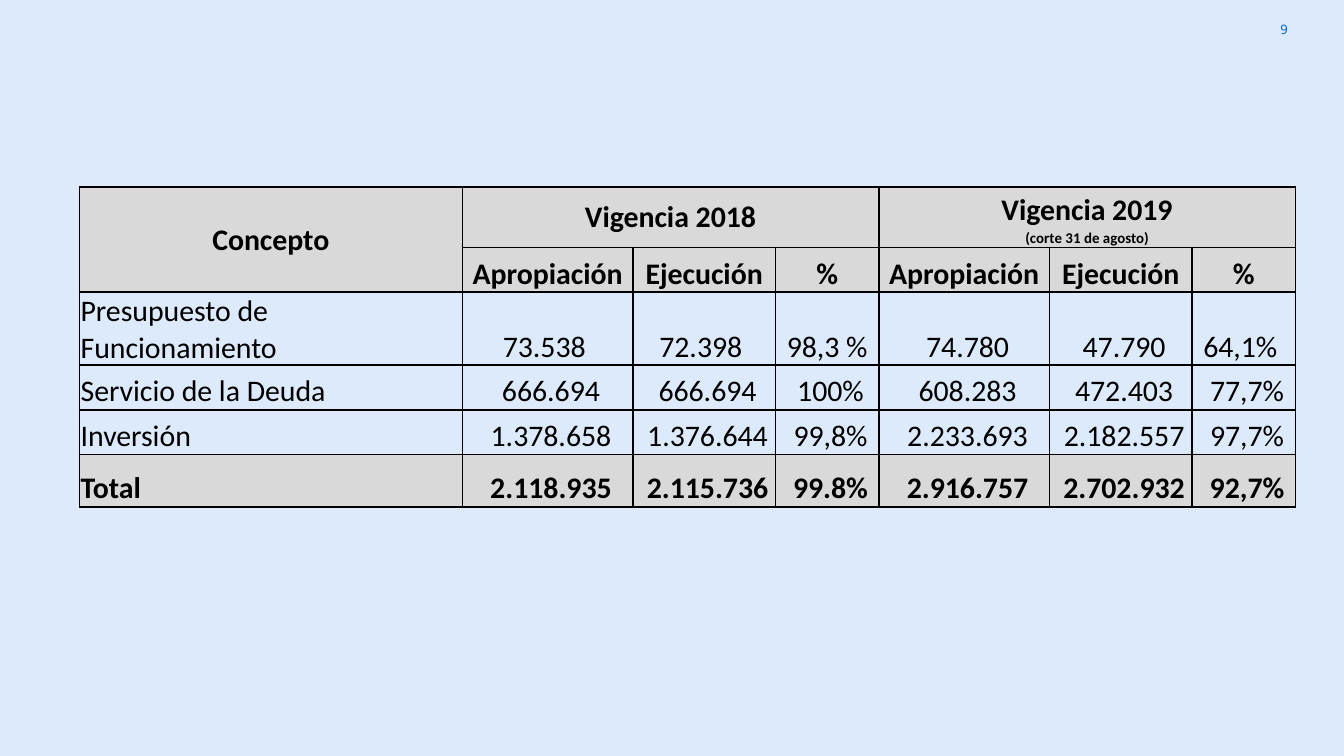
from lxml import etree
from pptx import Presentation
from pptx.dml.color import RGBColor
from pptx.enum import text
from pptx.oxml import ns
from pptx.util import Inches, Pt

BLACK, GRAY = "000000", "D9D9D9"
PAGE_NUMBER = "9"
SUBHEADS = ["Apropiación", "Ejecución", "%"]
ROWS = [
    ["Concepto", "Vigencia 2018", "", "", "Vigencia 2019", "", ""],
    ["", *SUBHEADS, *SUBHEADS],
    ["Presupuesto de Funcionamiento", "73.538 ", "72.398 ", "98,3 %", " 74.780", " 47.790", "64,1% "],
    ["Servicio de la Deuda", " 666.694", " 666.694", " 100%", " 608.283", " 472.403", " 77,7%"],
    ["Inversión", " 1.378.658", " 1.376.644", " 99,8%", " 2.233.693", " 2.182.557", " 97,7%"],
    ["Total", " 2.118.935", " 2.115.736", " 99.8%", " 2.916.757", " 2.702.932", " 92,7%"],
]
CUTOFF_NOTE = "(corte 31 de agosto)"
HEADER_ROWS = 2
TOTAL_ROW = len(ROWS) - 1
YEAR_WIDTHS = [1.27, 1.06, 0.77]
WIDTHS = [2.85, *YEAR_WIDTHS, *YEAR_WIDTHS]
LINE_HEIGHT = 1 / 3
HEIGHTS = [0.45, *[LINE_HEIGHT] * 4, 0.39]
MERGES = [((0, 0), (1, 0)), ((0, 1), (0, 3)), ((0, 4), (0, 6))]


def color(value):
    return RGBColor.from_string(value)


def style(paragraph, name, size, value, bold, alignment):
    paragraph.alignment = alignment
    font = paragraph.font
    font.name, font.size, font.bold = name, Pt(size), bold
    font.color.rgb = color(value)


def add_borders(cell):
    properties = cell._tc.get_or_add_tcPr()
    for position, side in enumerate(("lnL", "lnR", "lnT", "lnB")):
        line = etree.Element(ns.qn(f"a:{side}"), w=str(Pt(1)))
        fill = etree.SubElement(line, ns.qn("a:solidFill"))
        etree.SubElement(fill, ns.qn("a:srgbClr"), val=BLACK)
        properties.insert(position, line)


def fill_cell(cell, row, column, value):
    shaded = row < HEADER_ROWS or row == TOTAL_ROW
    cell.margin_left = cell.margin_right = cell.margin_top = Inches(0.01)
    cell.margin_bottom = 0
    centered = (row, column) in ((0, 0), (0, 1))
    cell.vertical_anchor = text.MSO_ANCHOR.MIDDLE if centered else text.MSO_ANCHOR.BOTTOM
    if shaded:
        cell.fill.solid()
        cell.fill.fore_color.rgb = color(GRAY)
    else:
        cell.fill.background()
    add_borders(cell)
    paragraph = cell.text_frame.paragraphs[0]
    left = column == 0 and row >= HEADER_ROWS
    style(paragraph, "Calibri", 16, BLACK, shaded,
          text.PP_ALIGN.LEFT if left else text.PP_ALIGN.CENTER)
    if value:
        paragraph.add_run().text = value


def add_budget_table(slide):
    frame = slide.shapes.add_table(len(ROWS), len(WIDTHS), Inches(0.59), Inches(1.39),
                                   Inches(sum(WIDTHS)), Inches(sum(HEIGHTS)))
    table = frame.table
    table.first_row = table.horz_banding = False
    for column, width in zip(table.columns, WIDTHS):
        column.width = Inches(width)
    for row, height in zip(table.rows, HEIGHTS):
        row.height = Inches(height)
    for row, values in enumerate(ROWS):
        for column, value in enumerate(values):
            fill_cell(table.cell(row, column), row, column, value)
    for first, last in MERGES:
        table.cell(*first).merge(table.cell(*last))
    paragraph = table.cell(0, 4).text_frame.paragraphs[0]
    paragraph.add_line_break()
    note = paragraph.add_run()
    note.text = CUTOFF_NOTE
    note.font.size = Pt(8)


def add_page_number(slide):
    box = slide.shapes.add_textbox(Inches(9.08), 0, Inches(0.6), Inches(0.43))
    frame = box.text_frame
    frame.word_wrap = True
    frame.vertical_anchor = text.MSO_ANCHOR.MIDDLE
    frame.margin_left = frame.margin_right = Inches(0.1)
    frame.margin_top = frame.margin_bottom = Inches(0.1)
    frame.text = PAGE_NUMBER
    style(frame.paragraphs[0], "Noto Sans", 7, "0066CD", False, text.PP_ALIGN.RIGHT)


def main():
    presentation = Presentation()
    presentation.slide_width = Inches(10)
    presentation.slide_height = presentation.slide_width * 9 // 16
    slide = presentation.slides.add_slide(presentation.slide_layouts[6])
    slide.background.fill.solid()
    slide.background.fill.fore_color.rgb = color("DCEAFB")
    add_page_number(slide)
    add_budget_table(slide)
    presentation.save("out.pptx")


if __name__ == "__main__":
    main()
